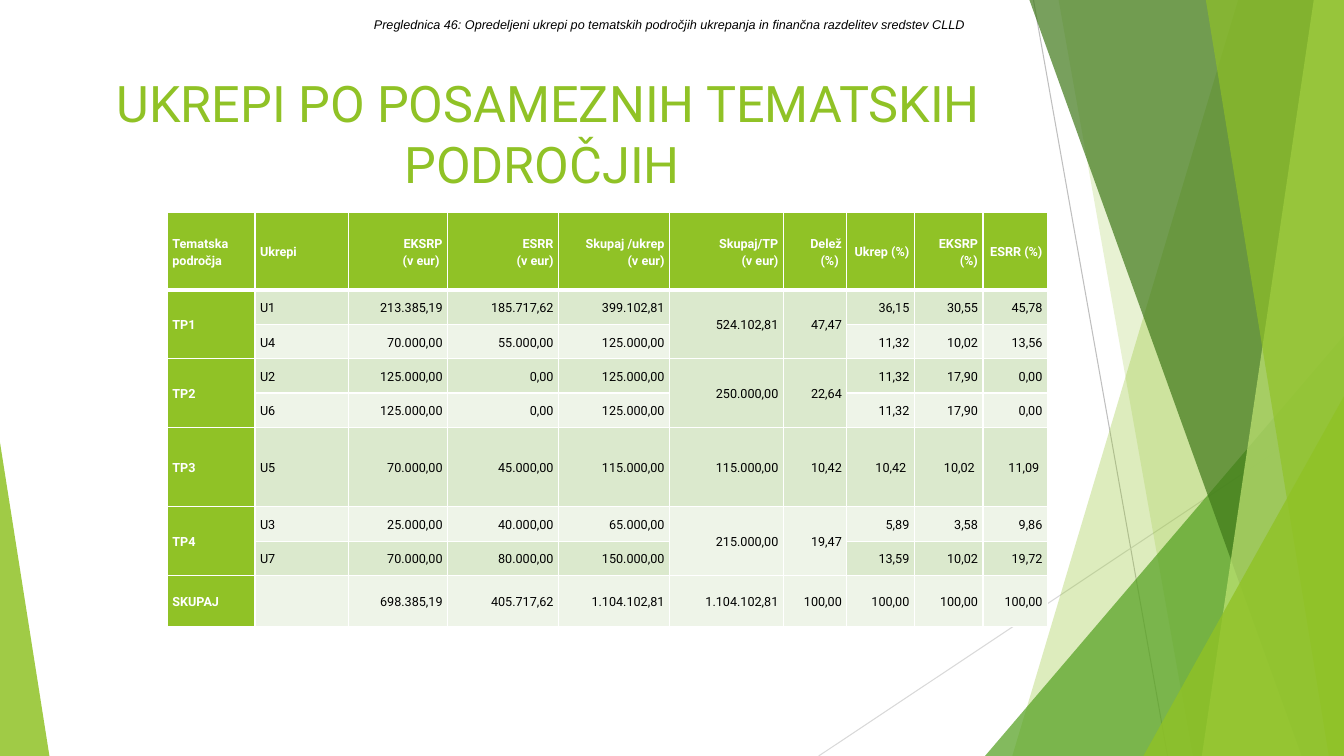
import dataclasses
import itertools
import typing

import lxml.etree
import pptx
import pptx.dml.color
import pptx.enum.shapes
import pptx.enum.text
import pptx.oxml.ns
import pptx.util

PX = 9144  # EMU per px, 100 px to the inch
COLORS = {
    "green": "90C226", "leaf": "54A021", "forest": "3F7819", "lime": "C0E474",
    "band": "DBE9CD", "pale": "EEF4E8", "white": "FFFFFF", "black": "000000",
    "gray": "BFBFBF", "silver": "D9D9D9",
}
SHAPES = pptx.enum.shapes.MSO_SHAPE
ALIGN = pptx.enum.text.PP_ALIGN
MIDDLE = pptx.enum.text.MSO_ANCHOR.MIDDLE
qn = pptx.oxml.ns.qn


class Ray(typing.NamedTuple):
    start: tuple[int, int]
    end: tuple[int, int]
    color: str


class Blade(typing.NamedTuple):
    """Band reaching the right edge, with a slanted left side."""
    top_x: int
    bottom_x: int
    color: str
    alpha: int


class Wedge(typing.NamedTuple):
    """Right triangle standing on the bottom edge; apex 0 is left, 1 is right."""
    box: tuple[int, int, int, int]
    apex: int
    color: str
    alpha: int


@dataclasses.dataclass(frozen=True)
class Area:
    name: str
    total: str
    share: str
    measures: list[tuple[str, ...]]  # code, three amounts, three percentages


RAYS = [Ray((1025, 0), (1158, 750), "gray"), Ray((1333, 403), (812, 750), "silver")]
FACETS = [
    Blade(1228, 1004, "green", 30),
    Blade(1050, 1183, "green", 20),
    Wedge((977, 333, 356, 417), 1, "leaf", 72),
    Blade(1021, 1291, "forest", 70),
    Blade(1303, 1192, "lime", 70),
    Blade(1196, 1318, "green", 65),
    Wedge((1134, 393, 199, 357), 1, "green", 80),
    Wedge((0, 439, 49, 311), 0, "green", 85),
]
HEADINGS = [
    "Tematska področja", "Ukrepi", "EKSRP\n(v eur) ", "ESRR\n(v eur)",
    "Skupaj /ukrep\n(v eur)", "Skupaj/TP\n(v eur)", "Delež\n(%) ",
    "Ukrep (%)", "EKSRP (%)", "ESRR (%)",
]
AREAS = [
    Area("TP1", "524.102,81", "47,47", [
        ("U1", "213.385,19", "185.717,62", "399.102,81", "36,15", "30,55", "45,78"),
        ("U4", "70.000,00", "55.000,00", "125.000,00", "11,32", "10,02", "13,56")]),
    Area("TP2", "250.000,00", "22,64", [
        ("U2", "125.000,00", "0,00", "125.000,00", "11,32", "17,90", "0,00"),
        ("U6", "125.000,00", "0,00", "125.000,00", "11,32", "17,90", "0,00")]),
    Area("TP3", "115.000,00", "10,42", [
        ("U5", "70.000,00", "45.000,00", "115.000,00", "10,42 ", "10,02 ", "11,09 ")]),
    Area("TP4", "215.000,00", "19,47", [
        ("U3", "25.000,00", "40.000,00", "65.000,00", "5,89", "3,58", "9,86"),
        ("U7", "70.000,00", "80.000,00", "150.000,00", "13,59", "10,02", "19,72")]),
    Area("SKUPAJ", "1.104.102,81", "100,00", [
        ("", "698.385,19", "405.717,62", "1.104.102,81", "100,00", "100,00", "100,00")]),
]
COLUMN_WIDTHS = [87, 93, 98, 110, 110, 113, 63, 67, 68, 64]
ROW_HEIGHTS = [77, 34, 34, 34, 34, 79, 34, 34, 51]
AREA_COLUMNS = (0, 5, 6)


def rgb(name: str) -> pptx.dml.color.RGBColor:
    return pptx.dml.color.RGBColor.from_string(COLORS[name])


def emu(*lengths: int) -> list[int]:
    return [length * PX for length in lengths]


def set_font(paragraph, face: str, size: int, color: str, bold=False, italic=False) -> None:
    font = paragraph.font
    font.name, font.size = face, pptx.util.Pt(size)
    font.bold, font.italic = bold, italic
    font.color.rgb = rgb(color)


def draw_ray(slide, ray: Ray) -> None:
    line = slide.shapes.add_connector(
        pptx.enum.shapes.MSO_CONNECTOR.STRAIGHT, *emu(*ray.start, *ray.end))
    line.line.color.rgb = rgb(ray.color)
    line.line.width = pptx.util.Pt(0.75)
    lxml.etree.SubElement(line.element.spPr, qn("a:effectLst"))


def draw_facet(slide, facet: Blade | Wedge) -> None:
    if isinstance(facet, Blade):
        outline = slide.shapes.build_freeform(facet.top_x, 0, scale=PX)
        outline.add_line_segments([(1333, 0), (1333, 750), (facet.bottom_x, 750)])
        shape = outline.convert_to_shape()
    else:
        shape = slide.shapes.add_shape(SHAPES.ISOSCELES_TRIANGLE, *emu(*facet.box))
        shape.adjustments[0] = facet.apex
    shape.shadow.inherit = False
    shape.line.fill.background()
    shape.fill.solid()
    shape.fill.fore_color.rgb = rgb(facet.color)
    color = next(shape.element.iter(qn("a:srgbClr")))
    lxml.etree.SubElement(color, qn("a:alpha"), val=str(facet.alpha * 1000))


def set_borders(cell, top: int, bottom: int) -> None:
    properties = cell._tc.get_or_add_tcPr()
    for side, points in (("L", 1), ("R", 1), ("T", top), ("B", bottom)):
        width = str(pptx.util.Pt(points))
        border = lxml.etree.SubElement(properties, qn(f"a:ln{side}"), w=width)
        fill = lxml.etree.SubElement(border, qn("a:solidFill"))
        lxml.etree.SubElement(fill, qn("a:srgbClr"), val=COLORS["white"])


def fill_cell(cell, text: str, row: int, column: int) -> None:
    is_heading = row == 0 or column == 0
    set_borders(cell, top=3 if row == 1 else 1, bottom=3 if row == 0 else 1)
    cell.fill.solid()
    cell.fill.fore_color.rgb = rgb("green" if is_heading else "band" if row % 2 else "pale")
    cell.margin_left = cell.margin_right = 5 * PX
    cell.margin_top = cell.margin_bottom = 0
    cell.vertical_anchor = MIDDLE
    cell.text = text
    for paragraph in cell.text_frame.paragraphs:
        paragraph.alignment = ALIGN.LEFT if column < 2 else ALIGN.RIGHT
        paragraph.line_spacing = 1.15
        set_font(paragraph, "Roboto", 9, "white" if is_heading else "black", bold=is_heading)


def draw_measures_table(slide) -> None:
    rows = [HEADINGS]
    for area in AREAS:
        for index, (code, *values) in enumerate(area.measures):
            name, total, share = (area.name, area.total, area.share) if index == 0 else ("", "", "")
            rows.append([name, code, *values[:3], total, share, *values[3:]])
    box = emu(166, 211, sum(COLUMN_WIDTHS), sum(ROW_HEIGHTS))
    table = slide.shapes.add_table(len(rows), len(HEADINGS), *box).table
    table.first_col, table.horz_banding = True, False
    for column, width in zip(table.columns, COLUMN_WIDTHS):
        column.width = width * PX
    for row, height in zip(table.rows, ROW_HEIGHTS):
        row.height = height * PX
    for row, texts in enumerate(rows):
        for column, text in enumerate(texts):
            fill_cell(table.cell(row, column), text, row, column)

    # Areas with several measures share one cell per area column
    counts = [len(area.measures) for area in AREAS]
    for first, count in zip(itertools.accumulate(counts, initial=1), counts):
        if count > 1:
            for column in AREA_COLUMNS:
                table.cell(first, column).merge(table.cell(first + count - 1, column))


def main() -> None:
    deck = pptx.Presentation()
    deck.slide_width, deck.slide_height = emu(1333, 750)
    slide = deck.slides.add_slide(deck.slide_layouts[5])

    # Background facets
    for ray in RAYS:
        draw_ray(slide, ray)
    for facet in FACETS:
        draw_facet(slide, facet)

    # Title
    title = slide.shapes.title
    title.left, title.top, title.width, title.height = emu(74, 67, 940, 144)
    title.text_frame.text = "UKREPI PO POSAMEZNIH TEMATSKIH PODROČJIH "
    title.text_frame.vertical_anchor = pptx.enum.text.MSO_ANCHOR.TOP
    title.text_frame.paragraphs[0].alignment = ALIGN.CENTER
    set_font(title.text_frame.paragraphs[0], "Roboto", 36, "green")

    # Measures by thematic area
    draw_measures_table(slide)

    # Table caption
    caption = slide.shapes.add_textbox(*emu(361, 12, 611, 25)).text_frame
    caption.word_wrap = False
    caption.auto_size = pptx.enum.text.MSO_AUTO_SIZE.SHAPE_TO_FIT_TEXT
    caption.vertical_anchor = MIDDLE
    caption.text = ("Preglednica 46: Opredeljeni ukrepi po tematskih področjih ukrepanja "
                    "in finančna razdelitev sredstev CLLD")
    caption.paragraphs[0].alignment = ALIGN.JUSTIFY
    set_font(caption.paragraphs[0], "Arial", 9, "black", italic=True)

    deck.save("out.pptx")


if __name__ == "__main__":
    main()
